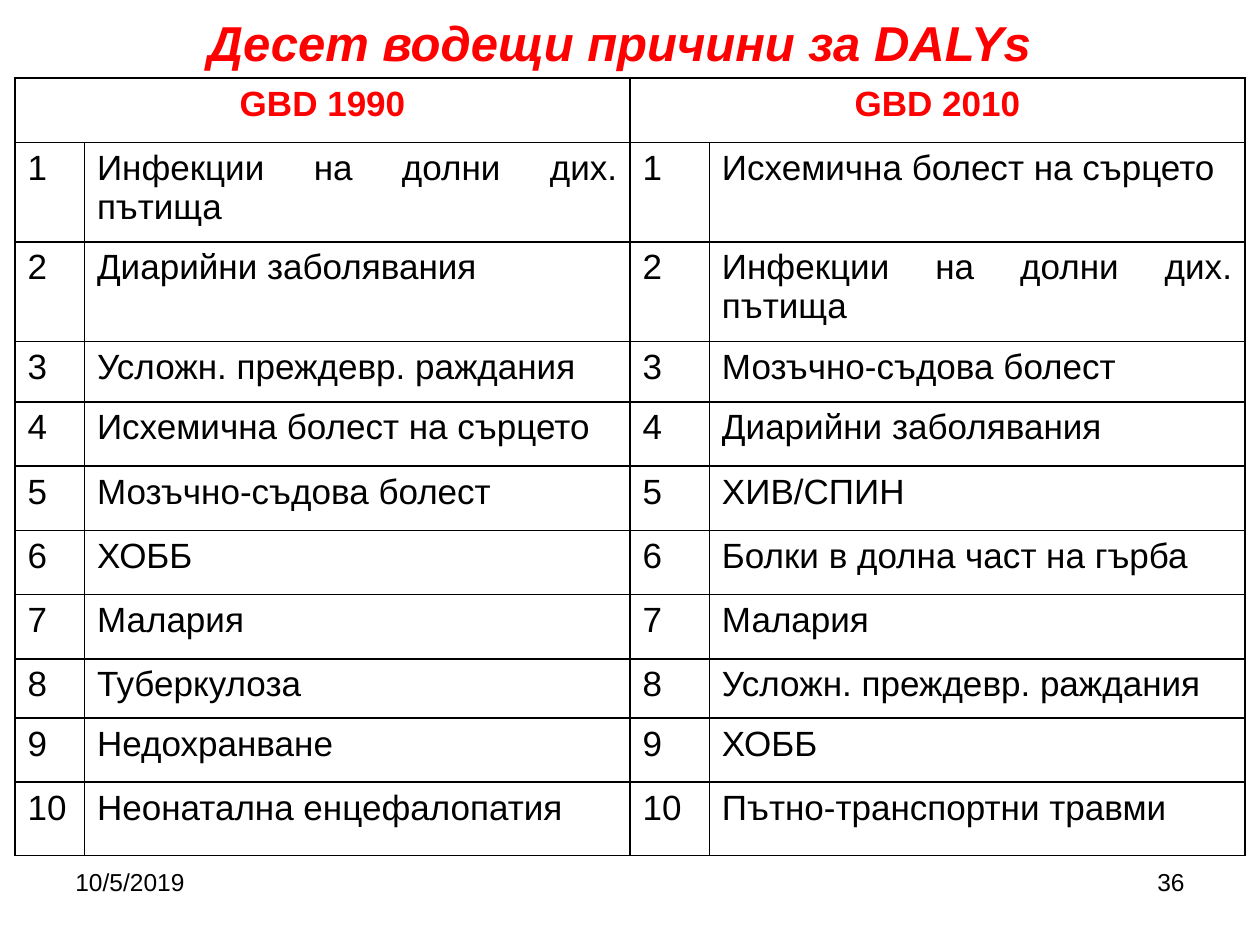
from dataclasses import dataclass

from lxml import etree
from pptx import Presentation
from pptx.dml.color import RGBColor
from pptx.enum.text import MSO_ANCHOR, PP_ALIGN
from pptx.oxml.ns import qn
from pptx.util import Inches, Pt

LEFT, CENTER, RIGHT, JUSTIFY = PP_ALIGN.LEFT, PP_ALIGN.CENTER, PP_ALIGN.RIGHT, PP_ALIGN.JUSTIFY
TOP, MIDDLE = MSO_ANCHOR.TOP, MSO_ANCHOR.MIDDLE
BLACK, RED, WHITE = "000000", "FF0000", "FFFFFF"

COLUMN_WIDTHS = [0.55, 4.33, 0.63, 4.25]
ROW_HEIGHTS = [0.51, 0.79, 0.79, 0.48, 0.51, 0.51, 0.51, 0.51, 0.47, 0.51, 0.58]


@dataclass
class Ranking:
    heading: str
    causes: list[str]


@dataclass
class Label:
    text: str
    left: float
    align: PP_ALIGN


RANKINGS = [
    Ranking("GBD 1990", [
        "Инфекции на долни дих. пътища",
        "Диарийни заболявания",
        "Усложн. преждевр. раждания",
        "Исхемична болест на сърцето",
        "Мозъчно-съдова болест",
        "ХОББ",
        "Малария",
        "Туберкулоза",
        "Недохранване",
        "Неонатална енцефалопатия",
    ]),
    Ranking("GBD 2010", [
        "Исхемична болест на сърцето",
        "Инфекции на долни дих. пътища",
        "Мозъчно-съдова болест",
        "Диарийни заболявания",
        "ХИВ/СПИН",
        "Болки в долна част на гърба",
        "Малария",
        "Усложн. преждевр. раждания",
        "ХОББ",
        "Пътно-транспортни травми",
    ]),
]
FOOTER = [Label("10/5/2019", 0.5, LEFT), Label("36", 7.17, RIGHT)]


def color(value: str) -> RGBColor:
    return RGBColor.from_string(value)


def write(frame, text: str, *, size: float, fill: str = BLACK, align: PP_ALIGN = LEFT,
          bold: bool = False, italic: bool = False) -> None:
    para = frame.paragraphs[0]
    para.alignment = align
    span = para.add_run()
    span.text = text
    font = span.font
    font.name, font.size, font.bold, font.italic = "Arial", Pt(size), bold, italic
    font.color.rgb = color(fill)


def add_text(page, text: str, left: float, top: float, width: float, height: float,
             anchor: MSO_ANCHOR = TOP, **text_format) -> None:
    box = page.shapes.add_textbox(Inches(left), Inches(top), Inches(width), Inches(height))
    box.text_frame.word_wrap = True
    box.text_frame.vertical_anchor = anchor
    write(box.text_frame, text, **text_format)


def style_cell(cell) -> None:
    """Give the cell a white fill and thin black borders."""
    properties = cell._tc.get_or_add_tcPr()
    for side in ("a:lnL", "a:lnR", "a:lnT", "a:lnB"):
        line = etree.SubElement(properties, qn(side), w=str(Pt(1)))
        solid = etree.SubElement(line, qn("a:solidFill"))
        etree.SubElement(solid, qn("a:srgbClr"), val=BLACK)
    cell.fill.solid()
    cell.fill.fore_color.rgb = color(WHITE)


def add_ranking(table, ranking: Ranking, column: int) -> None:
    heading = table.cell(0, column)
    heading.merge(table.cell(0, column + 1))
    write(heading.text_frame, ranking.heading, size=20, fill=RED, align=CENTER, bold=True)
    for rank, cause in enumerate(ranking.causes, start=1):
        for offset, text in enumerate((str(rank), cause)):
            write(table.cell(rank, column + offset).text_frame, text, size=20, align=JUSTIFY)


def add_rankings_table(page) -> None:
    table = page.shapes.add_table(
        len(ROW_HEIGHTS), len(COLUMN_WIDTHS), Inches(0.12), Inches(0.62),
        Inches(sum(COLUMN_WIDTHS)), Inches(sum(ROW_HEIGHTS))).table
    table.first_row = table.horz_banding = False
    for column, width in zip(table.columns, COLUMN_WIDTHS):
        column.width = Inches(width)
    for row, height in zip(table.rows, ROW_HEIGHTS):
        row.height = Inches(height)
    for cell in table.iter_cells():
        style_cell(cell)
    for index, ranking in enumerate(RANKINGS):
        add_ranking(table, ranking, 2 * index)


def main() -> None:
    deck = Presentation()
    deck.slide_width, deck.slide_height = Inches(10), Inches(7.5)
    page = deck.slides.add_slide(deck.slide_layouts[6])
    add_text(page, "Десет водещи причини за DALYs", 0.27, 0.05, 9.29, 0.57, MIDDLE,
             size=28, fill=RED, align=CENTER, bold=True, italic=True)
    add_rankings_table(page)
    for label in FOOTER:
        add_text(page, label.text, label.left, 6.83, 2.33, 0.52, size=14, align=label.align)
    deck.save("out.pptx")


if __name__ == "__main__":
    main()
